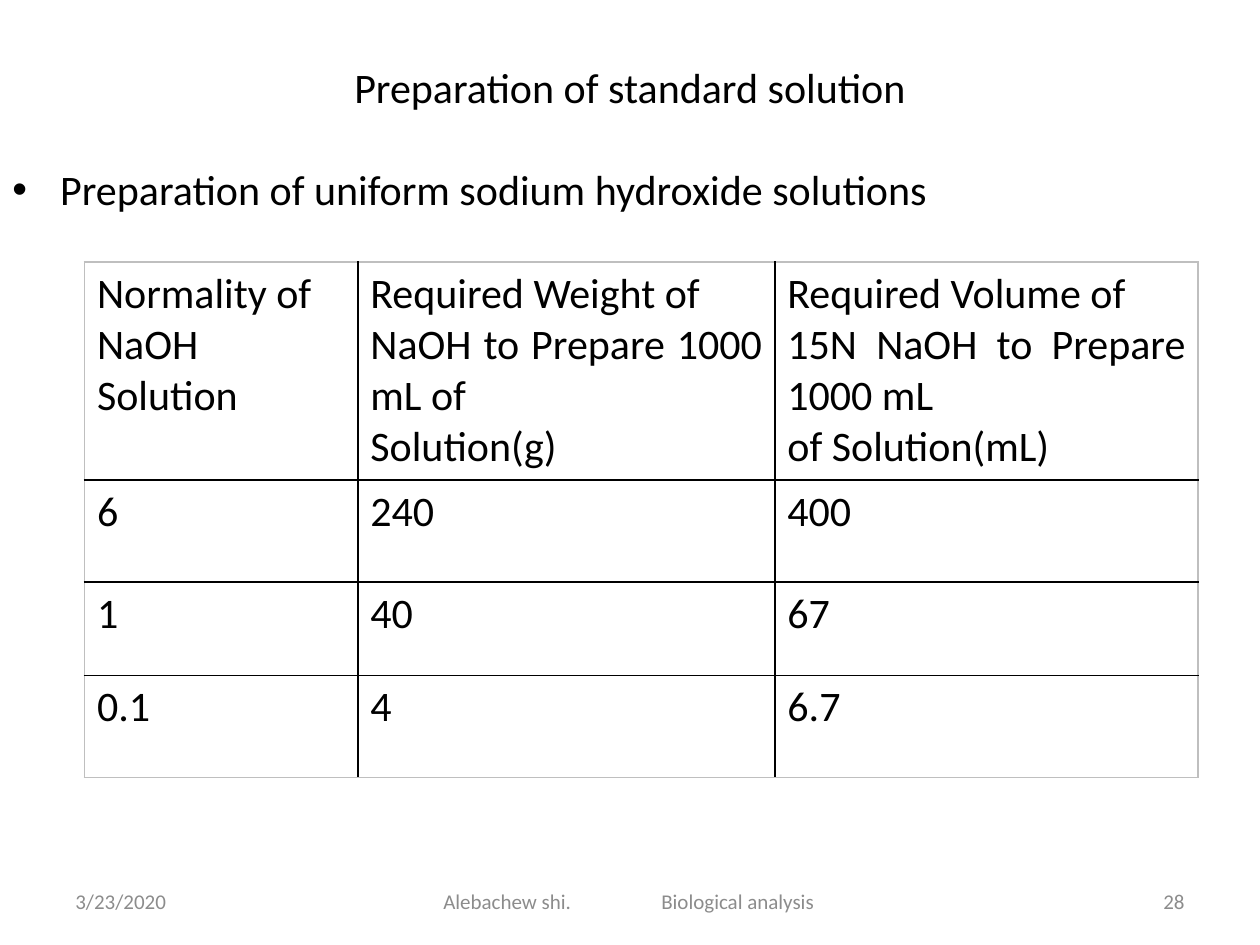
from lxml import etree
from pptx import Presentation
from pptx.dml.color import RGBColor
from pptx.enum import text
from pptx.oxml.ns import qn
from pptx.util import Inches, Pt

FONT = "Calibri"
COLORS = {"ink": "000000", "muted": "8C8C8C", "frame": "BFBFBF"}
ALIGN = text.PP_ALIGN

TITLE = "Preparation of standard solution"
BULLET = "Preparation of uniform sodium hydroxide solutions"
TABLE = [
    (("Normality of", "NaOH Solution"),
     ("Required Weight of", "NaOH to Prepare 1000 mL of", "Solution(g)"),
     ("Required Volume of", "15N NaOH to Prepare 1000 mL", "of Solution(mL)")),
    (("6",), ("240",), ("400",)),
    (("1",), ("40",), ("67",)),
    (("0.1",), ("4",), ("6.7",)),
]
COL_WIDTHS = (2.17, 3.31, 3.36)
ROW_HEIGHTS = (1.73, 0.81, 0.74, 0.81)
TABLE_AT = (0.67, 2.08)
FOOTER_TOP, FOOTER_HEIGHT = 6.95, 0.4
FOOTERS = [  # left, width, alignment, text
    (0.5, 2.33, ALIGN.LEFT, "3/23/2020"),
    (3.42, 3.17, ALIGN.LEFT, "Alebachew shi.\tBiological analysis"),
    (7.17, 2.33, ALIGN.RIGHT, "28"),
]
FOOTER_TAB = 1.73


def add_run(p, words, size=24, color="ink"):
    r = p.add_run()
    r.text = words
    r.font.name = FONT
    r.font.size = Pt(size)
    r.font.color.rgb = RGBColor.from_string(COLORS[color])


def add_text(slide, box, words, align, anchor=text.MSO_ANCHOR.MIDDLE, **style):
    sp = slide.shapes.add_textbox(*map(Inches, box))
    tf = sp.text_frame
    tf.word_wrap = True
    tf.vertical_anchor = anchor
    p = tf.paragraphs[0]
    p.alignment = align
    add_run(p, words, **style)
    return p


def add_bullet(p, indent):
    pPr = p._p.get_or_add_pPr()
    pPr.set("marL", str(Inches(indent)))
    pPr.set("indent", str(-Inches(indent)))
    etree.SubElement(pPr, qn("a:buFont")).set("typeface", "Arial")
    etree.SubElement(pPr, qn("a:buChar")).set("char", "•")


def add_tab_stop(p, position):
    tabs = etree.SubElement(p._p.get_or_add_pPr(), qn("a:tabLst"))
    tab = etree.SubElement(tabs, qn("a:tab"))
    tab.set("pos", str(Inches(position)))
    tab.set("algn", "l")


def set_borders(cell, outer):
    """Frame colour on the sides named in outer, ink on the others."""
    tcPr = cell._tc.get_or_add_tcPr()
    for i, side in enumerate("LRTB"):
        ln = etree.Element(qn(f"a:ln{side}"))
        ln.set("w", str(Pt(1)))
        fill = etree.SubElement(ln, qn("a:solidFill"))
        color = COLORS["frame" if side in outer else "ink"]
        etree.SubElement(fill, qn("a:srgbClr")).set("val", color)
        tcPr.insert(i, ln)


def add_solution_table(slide):
    n_rows, n_cols = len(ROW_HEIGHTS), len(COL_WIDTHS)
    size = (sum(COL_WIDTHS), sum(ROW_HEIGHTS))
    table = slide.shapes.add_table(
        n_rows, n_cols, *map(Inches, TABLE_AT + size)).table
    table.first_row = table.horz_banding = False
    for col, width in zip(table.columns, COL_WIDTHS):
        col.width = Inches(width)
    for row, height in zip(table.rows, ROW_HEIGHTS):
        row.height = Inches(height)
    for i, row in enumerate(TABLE):
        for j, lines in enumerate(row):
            cell = table.cell(i, j)
            cell.fill.background()
            edges = {"L": j == 0, "R": j == n_cols - 1,
                     "T": i == 0, "B": i == n_rows - 1}
            set_borders(cell, [side for side in edges if edges[side]])
            tf = cell.text_frame
            for k, line in enumerate(lines):
                p = tf.add_paragraph() if k else tf.paragraphs[0]
                p.alignment = ALIGN.JUSTIFY
                add_run(p, line)


def main():
    prs = Presentation()
    prs.slide_width, prs.slide_height = Inches(10), Inches(7.5)
    slide = prs.slides.add_slide(prs.slide_layouts[6])

    add_text(slide, (0.5, 0.3, 9, 0.78), TITLE, ALIGN.CENTER)
    p = add_text(slide, (0, 1.25, 9.5, 5.45), BULLET, ALIGN.LEFT,
                 text.MSO_ANCHOR.TOP)
    p.space_before = Pt(4.8)
    add_bullet(p, 0.38)
    add_solution_table(slide)
    for left, width, align, words in FOOTERS:
        p = add_text(slide, (left, FOOTER_TOP, width, FOOTER_HEIGHT), words,
                     align, size=12, color="muted")
        if "\t" in words:
            add_tab_stop(p, FOOTER_TAB)
    prs.save("out.pptx")


if __name__ == "__main__":
    main()
